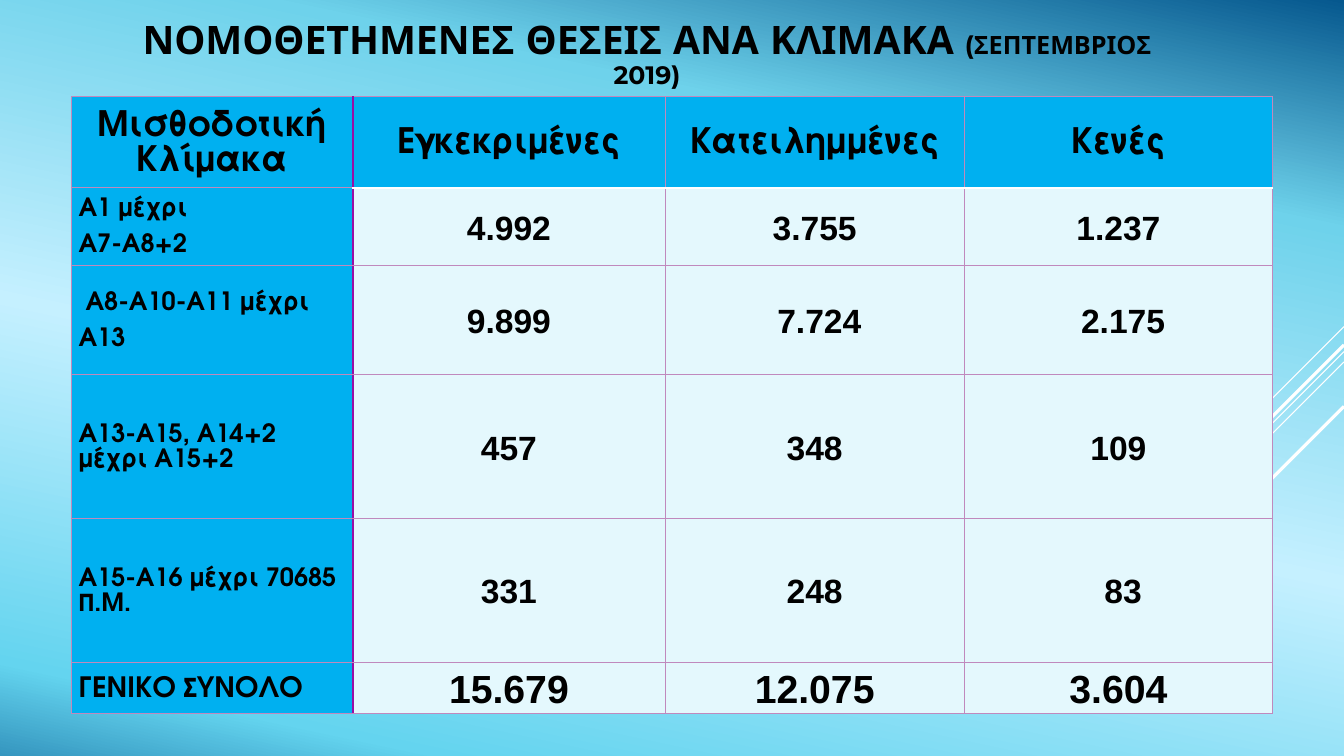
from lxml.etree import SubElement
from pptx import Presentation
from pptx.dml.color import RGBColor
from pptx.enum.shapes import MSO_CONNECTOR
from pptx.enum.text import MSO_ANCHOR, PP_ALIGN
from pptx.oxml.ns import qn
from pptx.util import Cm, Pt

SLIDE_WIDTH, SLIDE_HEIGHT = 33.87, 19.05
BACKGROUND_STOPS = [(0, "06588E"), (22, "6ED2EB"), (56, "C5F0FF"), (91, "64D4EF"), (100, "3596BF")]
RAYS = [(8.23, 2.54, 0.75), (8.86, 8.28, 0.75), (9.12, 5.26, 0.75), (8.69, 4.85, 2.25), (10.24, 3.53, 2.25)]
COLUMN_WIDTHS = [7.09, 7.87, 7.54, 7.77]
ROW_HEIGHTS = [1.91, 1.87, 2.77, 3.61, 3.63, 1.2]
ROWS = [
    ["Μισθοδοτική Κλίμακα", "Εγκεκριμένες", "Κατειλημμένες", "Κενές"],
    ["Α1 μέχρι\nΑ7-Α8+2", "4.992", "3.755", "1.237"],
    [" Α8-Α10-Α11 μέχρι\nΑ13", "9.899", " 7.724", " 2.175"],
    ["Α13-Α15, Α14+2 μέχρι Α15+2", "457", "348", "109"],
    ["Α15-Α16 μέχρι 70685 Π.Μ.", "331", "248", " 83"],
    ["ΓΕΝΙΚΟ ΣΥΝΟΛΟ", "15.679", "12.075", "3.604"],
]


def color(value):
    return RGBColor.from_string(value)


class SlideBuilder:
    ink = "000000"
    accent = "00B0F0"
    pale = "E4F8FD"
    white = "FFFFFF"
    title_font = "Montserrat"
    label_font = "TeX Gyre Adventor"
    number_font = "Arial"
    grid_border = ("C089BD", 0.75, 60)
    header_border = ("FFFFFF", 1.25, 100)
    label_border = ("990EA5", 1.25, 100)

    def __init__(self, deck):
        self.page = deck.slides.add_slide(deck.slide_layouts[6])

    def background(self, stops, angle):
        fill = self.page.background.fill
        fill.gradient()
        fill.gradient_angle = 360 - angle
        stop_list = fill._fill._gradFill.find(qn("a:gsLst"))
        for stop in list(stop_list):
            stop_list.remove(stop)
        for position, value in stops:
            stop = SubElement(stop_list, qn("a:gs"), pos=str(position * 1000))
            SubElement(stop, qn("a:srgbClr"), val=value)

    def ray(self, top, reach, width):
        line = self.page.shapes.add_connector(
            MSO_CONNECTOR.STRAIGHT, Cm(SLIDE_WIDTH), Cm(top), Cm(SLIDE_WIDTH - reach), Cm(top + reach))
        line.line.color.rgb = color(self.white)
        line.line.width = Pt(width)
        SubElement(line._element.spPr, qn("a:effectLst"))

    def span(self, para, text, size, font):
        span = para.add_run()
        span.text = text
        span.font.size = Pt(size)
        span.font.name = font
        span.font.bold = True
        span.font.color.rgb = color(self.ink)

    def title(self, left, top, width, height, parts):
        box = self.page.shapes.add_textbox(Cm(left), Cm(top), Cm(width), Cm(height))
        frame = box.text_frame
        frame.word_wrap = True
        frame.margin_top = frame.margin_bottom = 0
        para = frame.paragraphs[0]
        para.alignment = PP_ALIGN.CENTER
        para.line_spacing = 0.9
        for text, size in parts:
            self.span(para, text, size, self.title_font)

    def border(self, cell, side, style):
        value, width, opacity = style
        line = SubElement(cell._tc.get_or_add_tcPr(), qn(f"a:ln{side}"), w=str(Pt(width)))
        paint = SubElement(SubElement(line, qn("a:solidFill")), qn("a:srgbClr"), val=value)
        SubElement(paint, qn("a:alpha"), val=str(opacity * 1000))

    def cell(self, cell, text, size, font, fill, alignment, borders):
        for side in "LRTB":
            self.border(cell, side, borders.get(side, self.grid_border))
        cell.fill.solid()
        cell.fill.fore_color.rgb = color(fill)
        cell.vertical_anchor = MSO_ANCHOR.MIDDLE
        cell.margin_left = cell.margin_right = Cm(0.18)
        cell.margin_top, cell.margin_bottom = Cm(0.03), 0
        frame = cell.text_frame
        for index, line in enumerate(text.split("\n")):
            para = frame.add_paragraph() if index else frame.paragraphs[0]
            para.alignment = alignment
            para.line_spacing = 1.07
            para.space_after = Pt(8)
            self.span(para, line, size, font)

    def table(self, left, top, widths, heights, rows):
        table = self.page.shapes.add_table(
            len(rows), len(widths), Cm(left), Cm(top), Cm(sum(widths)), Cm(sum(heights))).table
        table.first_row = table.horz_banding = False
        for column, width in zip(table.columns, widths):
            column.width = Cm(width)
        for row, height in zip(table.rows, heights):
            row.height = Cm(height)
        last = len(rows) - 1
        for i, values in enumerate(rows):
            for j, text in enumerate(values):
                header, label = i == 0, j == 0
                if header:
                    size = 25
                elif label:
                    size = 20 if i == last else 18
                else:
                    size = 28 if i == last else 24
                borders = {}
                if j < 2:
                    borders["R" if label else "L"] = self.label_border
                if i < 2 and not label:
                    borders["B" if header else "T"] = self.header_border
                self.cell(
                    table.cell(i, j), text, size,
                    self.label_font if header or label else self.number_font,
                    self.accent if header or label else self.pale,
                    PP_ALIGN.LEFT if label and not header else PP_ALIGN.CENTER,
                    borders)


def main():
    deck = Presentation()
    deck.slide_width, deck.slide_height = Cm(SLIDE_WIDTH), Cm(SLIDE_HEIGHT)
    builder = SlideBuilder(deck)
    builder.background(BACKGROUND_STOPS, 102)
    for top, reach, width in RAYS:
        builder.ray(top, reach, width)
    builder.title(2.82, 0.52, 26.97, 2.2, [
        ("ΝΟΜΟΘΕΤΗΜΕΝΕΣ ΘΕΣΕΙΣ ΑΝΑ ΚΛΙΜΑΚΑ ", 28), ("(ΣΕΠΤΕΜΒΡΙΟΣ 2019)", 18)])
    builder.table(1.8, 2.44, COLUMN_WIDTHS, ROW_HEIGHTS, ROWS)
    deck.save("out.pptx")


if __name__ == "__main__":
    main()
